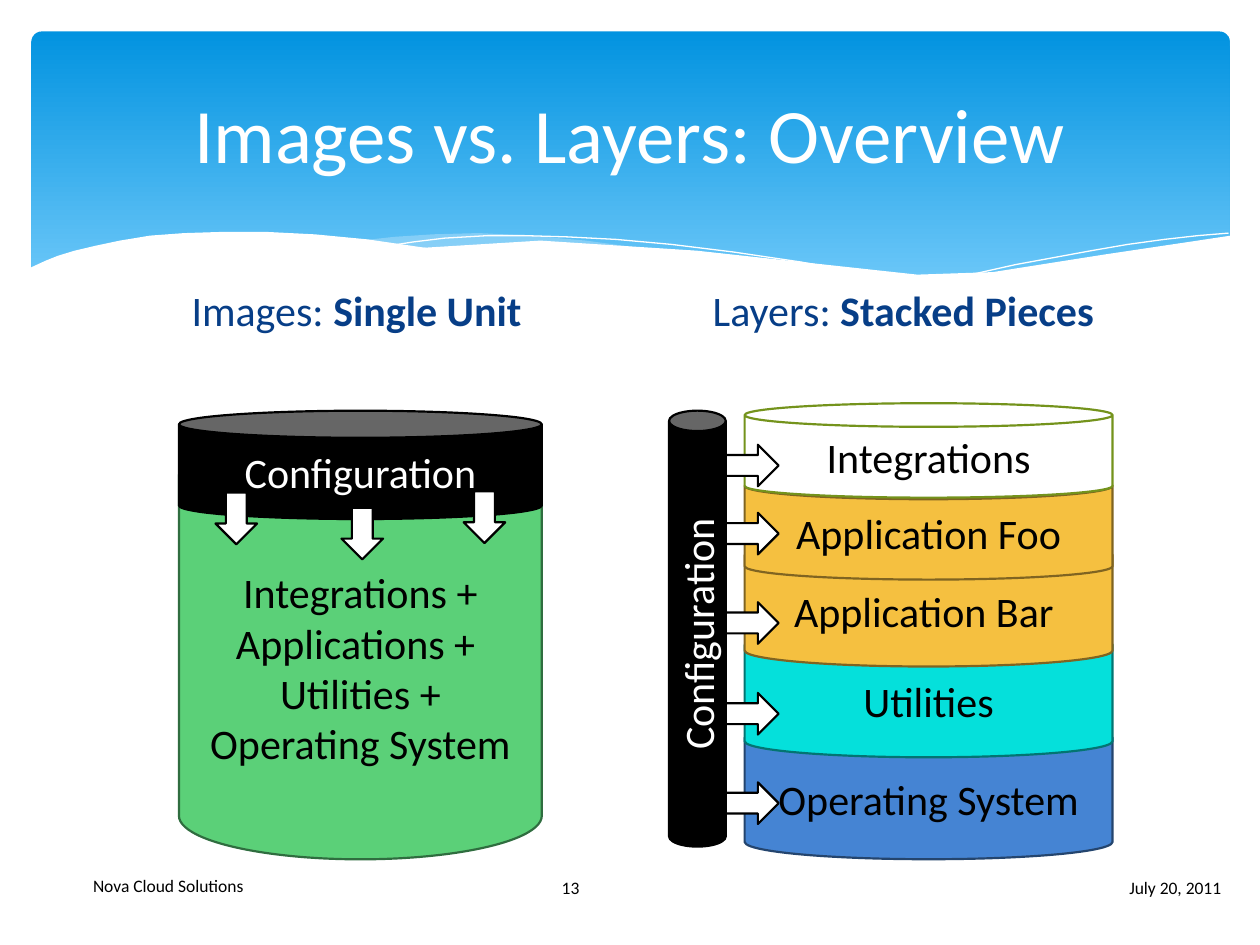
from dataclasses import dataclass
from typing import NamedTuple, Optional

from lxml import etree
from pptx import Presentation
from pptx.dml.color import RGBColor
from pptx.enum.shapes import MSO_SHAPE
from pptx.enum.text import MSO_ANCHOR, MSO_AUTO_SIZE, PP_ALIGN
from pptx.oxml.ns import qn
from pptx.util import Inches, Pt

CAN, ARROW, ROUNDED = MSO_SHAPE.CAN, MSO_SHAPE.RIGHT_ARROW, MSO_SHAPE.ROUNDED_RECTANGLE
LEFT, CENTER, RIGHT = PP_ALIGN.LEFT, PP_ALIGN.CENTER, PP_ALIGN.RIGHT
COMPARISON_LAYOUT = 4


@dataclass(frozen=True)
class Theme:
    font: str = "Calibri"
    title_size: int = 44
    body_size: int = 24
    footer_size: int = 10
    outline: float = 1.25
    white: str = "FFFFFF"
    black: str = "000000"
    heading: str = "073E87"
    banner_top: str = "0293E0"
    banner_bottom: str = "83D3FE"
    mist: str = "C6E7FC"
    green: str = "5BD078"
    green_edge: str = "2F6D3F"
    blue: str = "4584D3"
    blue_edge: str = "24456E"
    cyan: str = "05E0DB"
    cyan_edge: str = "037572"
    amber: str = "F5C040"
    amber_edge: str = "806421"
    olive_edge: str = "74931C"


THEME = Theme()


class Box(NamedTuple):
    left: float
    top: float
    width: float
    height: float


class Run(NamedTuple):
    text: str
    bold: bool = False


@dataclass(frozen=True)
class Cylinder:
    box: Box
    lines: tuple[str, ...]
    fill: str
    edge: str
    color: str = THEME.black
    rim: float = 0.25
    vertical: bool = False


class Wave(NamedTuple):
    points: list[tuple[float, float]]
    fill: Optional[str] = None
    opacity: int = 100


# Banner waves, back to front; those without a fill are hairlines
WAVES = [
    Wave([(9.76, 2), (9.48, 2.04), (9.06, 2.13), (8.61, 2.23), (8.05, 2.37), (7.29, 2.53),
          (6.61, 2.65), (7.05, 2.71), (7.57, 2.76), (8.14, 2.78), (8.63, 2.75), (9.05, 2.69),
          (9.42, 2.59), (9.76, 2.47)], THEME.mist, 29),
    Wave([(8.93, 2.73), (8.37, 2.65), (7.75, 2.54), (7.06, 2.4), (6.29, 2.22), (5.84, 2.11),
          (5.41, 2.03), (5.02, 1.96), (4.65, 1.91), (4.2, 1.87), (3.8, 1.85), (3.44, 1.86),
          (3.13, 1.88), (2.86, 1.91), (3.42, 1.99), (4.04, 2.11), (4.49, 2.22), (5.3, 2.4),
          (6.01, 2.55), (6.65, 2.66), (7.22, 2.74), (7.73, 2.77), (8.28, 2.78), (8.67, 2.76)],
         THEME.mist, 40),
    Wave([(3.09, 1.95), (3.28, 1.92), (3.53, 1.89), (3.87, 1.87), (4.16, 1.87), (4.5, 1.88),
          (4.89, 1.9), (5.33, 1.94), (5.82, 2), (6.36, 2.08), (6.95, 2.19), (7.6, 2.33),
          (8.31, 2.51), (9.07, 2.72)]),
    Wave([(6.13, 2.57), (6.53, 2.46), (6.95, 2.35), (7.48, 2.23), (8.06, 2.1), (8.66, 1.99),
          (8.95, 1.94), (9.24, 1.9), (9.51, 1.87), (9.75, 1.85)]),
    Wave([(9.77, 2.46), (9.5, 2.56), (9.1, 2.67), (8.63, 2.74), (8.09, 2.77), (7.61, 2.75),
          (7.08, 2.7), (6.48, 2.62), (5.79, 2.5), (5.03, 2.33), (4.47, 2.2), (3.91, 2.07),
          (3.4, 1.97), (2.92, 1.9), (2.5, 1.86), (2.11, 1.84), (1.77, 1.84), (1.46, 1.85),
          (1.19, 1.87), (0.95, 1.91), (0.76, 1.95), (0.59, 1.99), (0.46, 2.03), (0.36, 2.07),
          (0.23, 2.13), (0.23, 3.29), (9.77, 3.29)], THEME.white),
    Wave([(3.15, 1.98), (4.29, 1.91), (5.53, 1.99), (7.28, 2.18), (7.88, 2.16), (8.77, 2.02),
          (9.44, 1.92), (9.77, 1.87), (9.91, 3.02), (9.6, 3.43), (2.35, 3.38), (2.34, 2.01)],
         THEME.white),
]

IMAGE_LEFT, IMAGE_WIDTH = 1.42, 2.88
STACK_LEFT, STACK_WIDTH = 5.91, 2.92

IMAGE_UNIT = [
    Cylinder(Box(IMAGE_LEFT, 3.43, IMAGE_WIDTH, 3.39),
             ("Integrations + Applications + ", "Utilities + Operating System"),
             THEME.green, THEME.green_edge, rim=0.24),
    Cylinder(Box(IMAGE_LEFT, 3.26, IMAGE_WIDTH, 0.86), ("Configuration",),
             THEME.black, THEME.black, THEME.white),
]
LAYER_STACK = [
    Cylinder(Box(STACK_LEFT, top, STACK_WIDTH, height), (label,), fill, edge)
    for label, top, height, fill, edge in [
        ("Operating System", 5.72, 1.1, THEME.blue, THEME.blue_edge),
        ("Utilities", 4.99, 1.02, THEME.cyan, THEME.cyan_edge),
        ("Application Bar ", 4.28, 1.01, THEME.amber, THEME.amber_edge),
        ("Application Foo", 3.75, 0.85, THEME.amber, THEME.amber_edge),
        ("Integrations", 3.2, 0.75, THEME.white, THEME.olive_edge),
    ]
]
CONFIG_COLUMN = Cylinder(Box(5.31, 3.26, 0.45, 3.46), ("Configuration",), THEME.black,
                         THEME.black, THEME.white, rim=0.36, vertical=True)
DOWN_ARROWS = [(1.67, 3.95), (2.67, 4.07), (3.64, 3.94)]
LAYER_ARROW_TOPS = [3.53, 4.07, 4.78, 5.5, 6.21]


def apply(target, values: dict) -> None:
    for attribute, value in values.items():
        setattr(target, attribute, value)


def place(shape, box: Box) -> None:
    apply(shape, {side: Inches(value) for side, value in box._asdict().items()})


def write(shape, paragraphs: list[list[Run]], size: int, color: str, align=CENTER) -> None:
    frame = shape.text_frame
    apply(frame, {"word_wrap": True, "auto_size": MSO_AUTO_SIZE.NONE,
                  "vertical_anchor": MSO_ANCHOR.MIDDLE})
    for index, runs in enumerate(paragraphs):
        paragraph = frame.add_paragraph() if index else frame.paragraphs[0]
        apply(paragraph, {"alignment": align, "space_before": Pt(0)})
        for text, bold in runs:
            run = paragraph.add_run()
            run.text = text
            apply(run.font, {"name": THEME.font, "size": Pt(size), "bold": bold})
            run.font.color.rgb = RGBColor.from_string(color)


def add_preset(slide, preset, box: Box, fill: str, edge: str):
    shape = slide.shapes.add_shape(preset, *map(Inches, box))
    shape.shadow.inherit = False
    shape.fill.solid()
    shape.fill.fore_color.rgb = RGBColor.from_string(fill)
    shape.line.color.rgb = RGBColor.from_string(edge)
    shape.line.width = Pt(THEME.outline)
    return shape


def add_cylinder(slide, cylinder: Cylinder) -> None:
    shape = add_preset(slide, CAN, cylinder.box, cylinder.fill, cylinder.edge)
    shape.adjustments[0] = cylinder.rim
    write(shape, [[Run(line)] for line in cylinder.lines], THEME.body_size, cylinder.color)
    if cylinder.vertical:
        shape.element.txBody.find(qn("a:bodyPr")).set("vert", "vert270")


def add_arrow(slide, left: float, top: float, length: float, rotation: int = 0) -> None:
    arrow = add_preset(slide, ARROW, Box(left, top, length, 0.33), THEME.white, THEME.black)
    arrow.rotation = rotation


def add_wave(slide, wave: Wave) -> None:
    points = [(Inches(x), Inches(y)) for x, y in wave.points]
    builder = slide.shapes.build_freeform(*points[0])
    builder.add_line_segments(points[1:], close=wave.fill is not None)
    shape = builder.convert_to_shape()
    shape.shadow.inherit = False
    if wave.fill is None:
        shape.fill.background()
        shape.line.color.rgb = RGBColor.from_string(THEME.white)
        shape.line.width = Pt(0)
        return
    shape.line.fill.background()
    shape.fill.solid()
    shape.fill.fore_color.rgb = RGBColor.from_string(wave.fill)
    if wave.opacity < 100:
        color = shape.element.spPr.find(qn("a:solidFill")).find(qn("a:srgbClr"))
        etree.SubElement(color, qn("a:alpha")).set("val", str(wave.opacity * 1000))


def add_banner(slide) -> None:
    banner = add_preset(slide, ROUNDED, Box(0.25, 0.25, 9.51, 2.7), THEME.white, THEME.white)
    banner.adjustments[0] = 0.03
    banner.line.fill.background()
    banner.fill.gradient()
    banner.fill.gradient_angle = 270
    stops = [(0, THEME.banner_top), (0.9, THEME.banner_bottom)]
    for stop, (position, color) in zip(banner.fill.gradient_stops, stops):
        stop.position = position
        stop.color.rgb = RGBColor.from_string(color)
    for wave in WAVES:
        add_wave(slide, wave)


def add_headings(slide) -> None:
    title, left_heading, left_body, right_heading, right_body = slide.placeholders
    for unused in (left_body, right_body):
        unused.element.getparent().remove(unused.element)
    for holder, box, runs, size, color in [
        (title, Box(0.5, 0.37, 9, 1.37), [Run("Images vs. Layers: Overview")],
         THEME.title_size, THEME.white),
        (left_heading, Box(0.74, 2.11, 4.18, 0.7), [Run("Images: "), Run("Single Unit", True)],
         THEME.body_size, THEME.heading),
        (right_heading, Box(5.08, 2.11, 4.18, 0.7),
         [Run("Layers: "), Run("Stacked Pieces", True)], THEME.body_size, THEME.heading),
    ]:
        place(holder, box)
        write(holder, [runs], size, color)
        holder.element.getparent().append(holder.element)  # in front of the banner


def add_footer(slide) -> None:
    for text, box, align in [
        ("July 20, 2011", Box(5.65, 6.84, 4.14, 0.4), RIGHT),
        ("Nova Cloud Solutions", Box(0.64, 6.83, 4.14, 0.4), LEFT),
        ("13", Box(4.36, 6.84, 1.27, 0.4), LEFT),
    ]:
        note = slide.shapes.add_textbox(*map(Inches, box))
        write(note, [[Run(text)]], THEME.footer_size, THEME.black, align)


def main() -> None:
    deck = Presentation()
    deck.slide_width, deck.slide_height = Inches(10), Inches(7.5)
    slide = deck.slides.add_slide(deck.slide_layouts[COMPARISON_LAYOUT])
    add_banner(slide)
    add_headings(slide)
    add_footer(slide)
    # Single image beside the stack of layers
    for cylinder in IMAGE_UNIT + LAYER_STACK:
        add_cylinder(slide, cylinder)
    # Configuration flowing into each part
    for left, top in DOWN_ARROWS:
        add_arrow(slide, left, top, 0.41, rotation=90)
    for top in LAYER_ARROW_TOPS:
        add_arrow(slide, 5.67, top, 0.51)
    add_cylinder(slide, CONFIG_COLUMN)
    deck.save("out.pptx")


if __name__ == "__main__":
    main()
